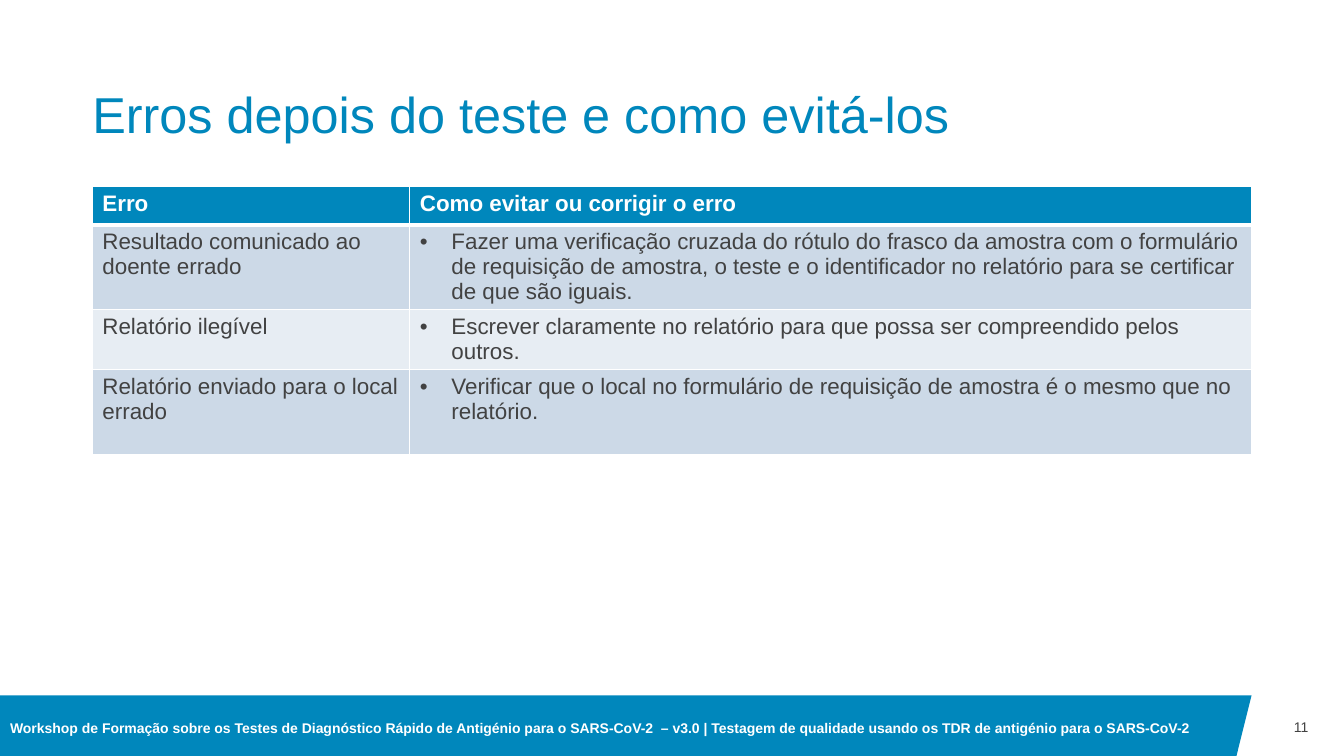
from dataclasses import dataclass

from lxml.etree import SubElement
from pptx import Presentation
from pptx.dml.color import RGBColor
from pptx.enum.text import MSO_ANCHOR, MSO_AUTO_SIZE, PP_ALIGN
from pptx.oxml.ns import qn
from pptx.slide import Slide
from pptx.table import _Cell
from pptx.text.text import TextFrame
from pptx.util import Inches, Length, Pt

SLIDE_WIDTH, SLIDE_HEIGHT = Inches(13.333), Inches(7.5)
GRID_COLUMNS, GRID_ROWS = 160, 90
COLORS = {"blue": "0087BC", "text": "424242", "white": "FFFFFF",
          "dark_band": "CCD9E7", "light_band": "E7EDF3"}
FONT = "Arial"

LEFT, RIGHT = 11, 149
BANNER_TOP = 82.8
BANNER_SLANT = 1.8
TABLE_TOP = 22.2
ERROR_WIDTH = 37.8
HEADER_HEIGHT = 4.56
BULLET_INDENT = Pt(22.5)


@dataclass(frozen=True)
class Area:
    """A rectangle in grid columns and rows."""
    left: float
    top: float
    width: float
    height: float


@dataclass(frozen=True)
class ErrorRow:
    error: str
    remedy: str
    height: float


ERROR_ROWS = [
    ErrorRow("Resultado comunicado ao doente errado",
             "Fazer uma verificação cruzada do rótulo do frasco da amostra com o "
             "formulário de requisição de amostra, o teste e o identificador no "
             "relatório para se certificar de que são iguais.", 10),
    ErrorRow("Relatório ilegível",
             "Escrever claramente no relatório para que possa ser compreendido "
             "pelos outros.", 7.1),
    ErrorRow("Relatório enviado para o local errado",
             "Verificar que o local no formulário de requisição de amostra é o "
             "mesmo que no relatório.", 10.1),
]


def columns(count: float) -> Length:
    return Length(round(SLIDE_WIDTH * count / GRID_COLUMNS))


def rows(count: float) -> Length:
    return Length(round(SLIDE_HEIGHT * count / GRID_ROWS))


def rgb(name: str) -> RGBColor:
    return RGBColor.from_string(COLORS[name])


def write(frame: TextFrame, text: str, *, size: float, color: str,
          bold: bool = False, align: PP_ALIGN = PP_ALIGN.LEFT,
          spacing: float = 1.0, bullet: bool = False) -> None:
    paragraph = frame.paragraphs[0]
    paragraph.alignment = align
    paragraph.line_spacing = spacing
    if bullet:
        properties = paragraph._p.get_or_add_pPr()
        properties.set("marL", str(BULLET_INDENT))
        properties.set("indent", str(-BULLET_INDENT))
        SubElement(properties, qn("a:buFont"), typeface=FONT)
        SubElement(properties, qn("a:buChar"), char="•")
    run = paragraph.add_run()
    run.text = text
    run.font.name = FONT
    run.font.size = Pt(size)
    run.font.bold = bold
    run.font.color.rgb = rgb(color)


def set_up_frame(frame: TextFrame, anchor: MSO_ANCHOR) -> None:
    frame.word_wrap = True
    frame.auto_size = MSO_AUTO_SIZE.NONE
    frame.vertical_anchor = anchor
    frame.margin_left = frame.margin_right = 0
    frame.margin_top = frame.margin_bottom = 0


def add_label(slide: Slide, area: Area, text: str, *, color: str,
              bold: bool = False, align: PP_ALIGN = PP_ALIGN.LEFT) -> None:
    label = slide.shapes.add_textbox(columns(area.left), rows(area.top),
                                     columns(area.width), rows(area.height))
    set_up_frame(label.text_frame, MSO_ANCHOR.MIDDLE)
    write(label.text_frame, text, size=10, color=color, bold=bold, align=align)


def add_title(slide: Slide, text: str) -> None:
    title = slide.shapes.title
    title.left, title.top = columns(LEFT), rows(4.8)
    title.width, title.height = columns(RIGHT - LEFT), rows(12.4)
    set_up_frame(title.text_frame, MSO_ANCHOR.BOTTOM)
    write(title.text_frame, text, size=36, color="blue", spacing=0.9)


def add_banner(slide: Slide) -> None:
    outline = slide.shapes.build_freeform(0, rows(BANNER_TOP))
    outline.add_line_segments([
        (columns(RIGHT), rows(BANNER_TOP)),
        (columns(RIGHT - BANNER_SLANT), rows(GRID_ROWS)),
        (0, rows(GRID_ROWS)),
    ])
    banner = outline.convert_to_shape()
    banner.shadow.inherit = False
    banner.fill.solid()
    banner.fill.fore_color.rgb = rgb("blue")
    banner.line.fill.background()


def style_cell(cell: _Cell, fill: str, top_width: float, bottom_width: float) -> None:
    """Give a cell its fill and white borders, with widths in points."""
    properties = cell._tc.get_or_add_tcPr()
    for side, width in (("L", 1), ("R", 1), ("T", top_width), ("B", bottom_width)):
        border = SubElement(properties, qn(f"a:ln{side}"), w=str(Pt(width)))
        solid = SubElement(border, qn("a:solidFill"))
        SubElement(solid, qn("a:srgbClr"), val=COLORS["white"])
    cell.fill.solid()
    cell.fill.fore_color.rgb = rgb(fill)


def add_error_table(slide: Slide) -> None:
    header = ErrorRow("Erro", "Como evitar ou corrigir o erro", HEADER_HEIGHT)
    entries = [header, *ERROR_ROWS]
    table = slide.shapes.add_table(
        len(entries), 2, columns(LEFT), rows(TABLE_TOP), columns(RIGHT - LEFT),
        rows(sum(entry.height for entry in entries))).table
    table.columns[0].width = columns(ERROR_WIDTH)
    table.columns[1].width = columns(RIGHT - LEFT - ERROR_WIDTH)
    for index, entry in enumerate(entries):
        table.rows[index].height = rows(entry.height)
        is_header = index == 0
        band = "dark_band" if index % 2 else "light_band"
        for column, text in enumerate((entry.error, entry.remedy)):
            cell = table.cell(index, column)
            style_cell(cell, "blue" if is_header else band,
                       top_width=3 if index == 1 else 1,
                       bottom_width=3 if is_header else 1)
            write(cell.text_frame, text, size=16, bold=is_header,
                  color="white" if is_header else "text",
                  bullet=column == 1 and not is_header)


def main() -> None:
    presentation = Presentation()
    presentation.slide_width = SLIDE_WIDTH
    presentation.slide_height = SLIDE_HEIGHT
    slide = presentation.slides.add_slide(presentation.slide_layouts[5])
    add_banner(slide)
    add_title(slide, "Erros depois do teste e como evitá-los")
    add_label(slide, Area(RIGHT, BANNER_TOP, 6.75, 7.5), "11",
              color="text", align=PP_ALIGN.RIGHT)
    add_error_table(slide)
    add_label(slide, Area(1.2, 83.4, 142.5, 6.6),
              "Workshop de Formação sobre os Testes de Diagnóstico Rápido de "
              "Antigénio para o SARS-CoV-2  – v3.0 | Testagem de qualidade "
              "usando os TDR de antigénio para o SARS-CoV-2",
              color="white", bold=True)
    presentation.save("out.pptx")


if __name__ == "__main__":
    main()
